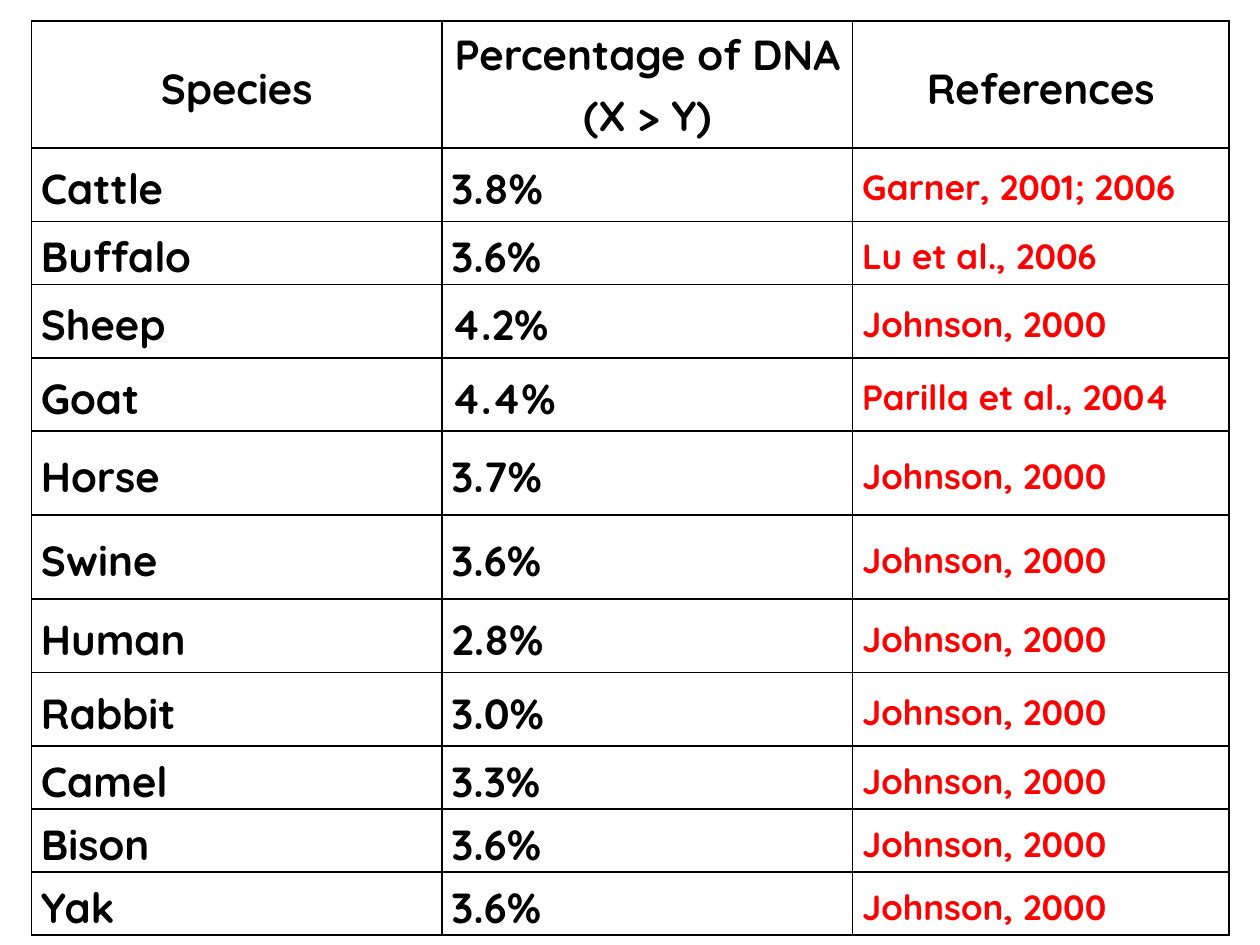
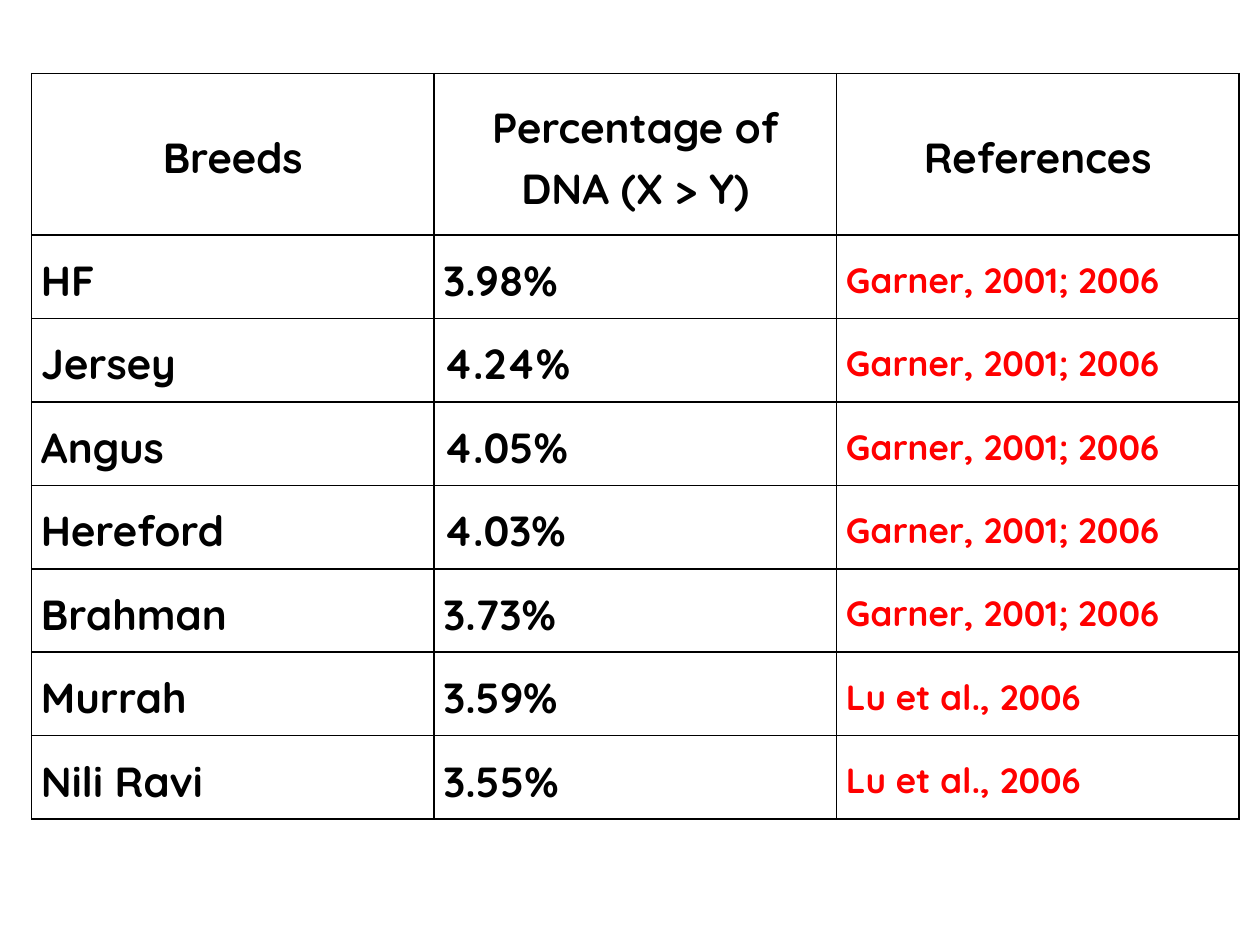
from dataclasses import dataclass

from lxml.etree import SubElement
from pptx import Presentation
from pptx.dml.color import RGBColor
from pptx.enum.text import MSO_ANCHOR, PP_ALIGN
from pptx.oxml.ns import qn
from pptx.slide import Slide
from pptx.table import _Cell
from pptx.util import Pt

FONT = "Quicksand"
BLACK = "000000"
RED = "FF0000"
TABLE_LEFT = 18
SIDE_MARGIN = 5.4
LINE_SPACING = 1.15
BORDER_WIDTH = 1
BORDER_SIDES = ("a:lnL", "a:lnR", "a:lnT", "a:lnB")
REFERENCE_COLUMN = 2

GARNER = "Garner, 2001; 2006"
JOHNSON = "Johnson, 2000"
LU = "Lu et al., 2006"


@dataclass(frozen=True)
class DnaRow:
    name: str
    percentage: str
    reference: str
    height: float = 47.7


@dataclass(frozen=True)
class DnaTable:
    subject: str
    top: float
    header_height: float
    column_widths: tuple[float, ...]
    rows: tuple[DnaRow, ...]
    percentage_anchor: MSO_ANCHOR = MSO_ANCHOR.MIDDLE


SPECIES = DnaTable(
    subject="Species",
    top=12,
    header_height=72.5,
    column_widths=(234.6, 234.6, 215),
    rows=(
        DnaRow("Cattle", "3.8%", GARNER, 42),
        DnaRow("Buffalo", "3.6%", LU, 36),
        DnaRow("Sheep", "4.2%", JOHNSON, 42),
        DnaRow("Goat", "4.4%", "Parilla et al., 2004", 42),
        DnaRow("Horse", "3.7%", JOHNSON, 48),
        DnaRow("Swine", "3.6%", JOHNSON, 48),
        DnaRow("Human", "2.8%", JOHNSON, 42),
        DnaRow("Rabbit", "3.0%", JOHNSON, 42),
        DnaRow("Camel", "3.3%", JOHNSON, 36),
        DnaRow("Bison", "3.6%", JOHNSON, 36),
        DnaRow("Yak", "3.6%", JOHNSON, 36),
    ),
    percentage_anchor=MSO_ANCHOR.TOP,
)

BREEDS = DnaTable(
    subject="Breeds",
    top=42,
    header_height=92.3,
    column_widths=(230, 230, 230),
    rows=(
        DnaRow("HF", "3.98%", GARNER),
        DnaRow("Jersey", "4.24%", GARNER),
        DnaRow("Angus", "4.05%", GARNER),
        DnaRow("Hereford", "4.03%", GARNER),
        DnaRow("Brahman", "3.73%", GARNER),
        DnaRow("Murrah", "3.59%", LU),
        DnaRow("Nili Ravi", "3.55%", LU),
    ),
)


def color(value: str) -> RGBColor:
    return RGBColor.from_string(value)


def add_borders(cell: _Cell) -> None:
    properties = cell._tc.get_or_add_tcPr()
    for side in BORDER_SIDES:
        line = SubElement(properties, qn(side), w=str(Pt(BORDER_WIDTH)))
        fill = SubElement(line, qn("a:solidFill"))
        SubElement(fill, qn("a:srgbClr"), val=BLACK)


def write_cell(
    cell: _Cell,
    text: str,
    size: float = 24,
    text_color: str = BLACK,
    alignment: PP_ALIGN = PP_ALIGN.LEFT,
    anchor: MSO_ANCHOR = MSO_ANCHOR.MIDDLE,
) -> None:
    add_borders(cell)
    cell.fill.background()
    cell.margin_left = cell.margin_right = Pt(SIDE_MARGIN)
    cell.margin_top = cell.margin_bottom = Pt(0)
    cell.vertical_anchor = anchor
    paragraph = cell.text_frame.paragraphs[0]
    paragraph.text = text
    paragraph.alignment = alignment
    paragraph.line_spacing = LINE_SPACING
    font = paragraph.runs[0].font
    font.name = FONT
    font.size = Pt(size)
    font.bold = True
    font.color.rgb = color(text_color)


def add_dna_table(slide: Slide, content: DnaTable) -> None:
    heights = [content.header_height, *(row.height for row in content.rows)]
    shape = slide.shapes.add_table(
        len(heights),
        len(content.column_widths),
        Pt(TABLE_LEFT),
        Pt(content.top),
        Pt(sum(content.column_widths)),
        Pt(sum(heights)),
    )
    table = shape.table
    table.first_row = False
    table.horz_banding = False
    for column, width in zip(table.columns, content.column_widths):
        column.width = Pt(width)
    for table_row, height in zip(table.rows, heights):
        table_row.height = Pt(height)

    headers = (
        (content.subject, MSO_ANCHOR.MIDDLE),
        ("Percentage of DNA (X > Y)", content.percentage_anchor),
        ("References", MSO_ANCHOR.MIDDLE),
    )
    for column_index, (header, anchor) in enumerate(headers):
        write_cell(table.cell(0, column_index), header, alignment=PP_ALIGN.CENTER, anchor=anchor)
    for row_index, row in enumerate(content.rows, start=1):
        write_cell(table.cell(row_index, 0), row.name)
        write_cell(table.cell(row_index, 1), row.percentage)
        write_cell(table.cell(row_index, REFERENCE_COLUMN), row.reference, size=20, text_color=RED)


def main() -> None:
    presentation = Presentation()
    presentation.slide_width = Pt(720)
    presentation.slide_height = Pt(540)
    for content in (SPECIES, BREEDS):
        slide = presentation.slides.add_slide(presentation.slide_layouts[6])
        add_dna_table(slide, content)
    presentation.save("out.pptx")


if __name__ == "__main__":
    main()
